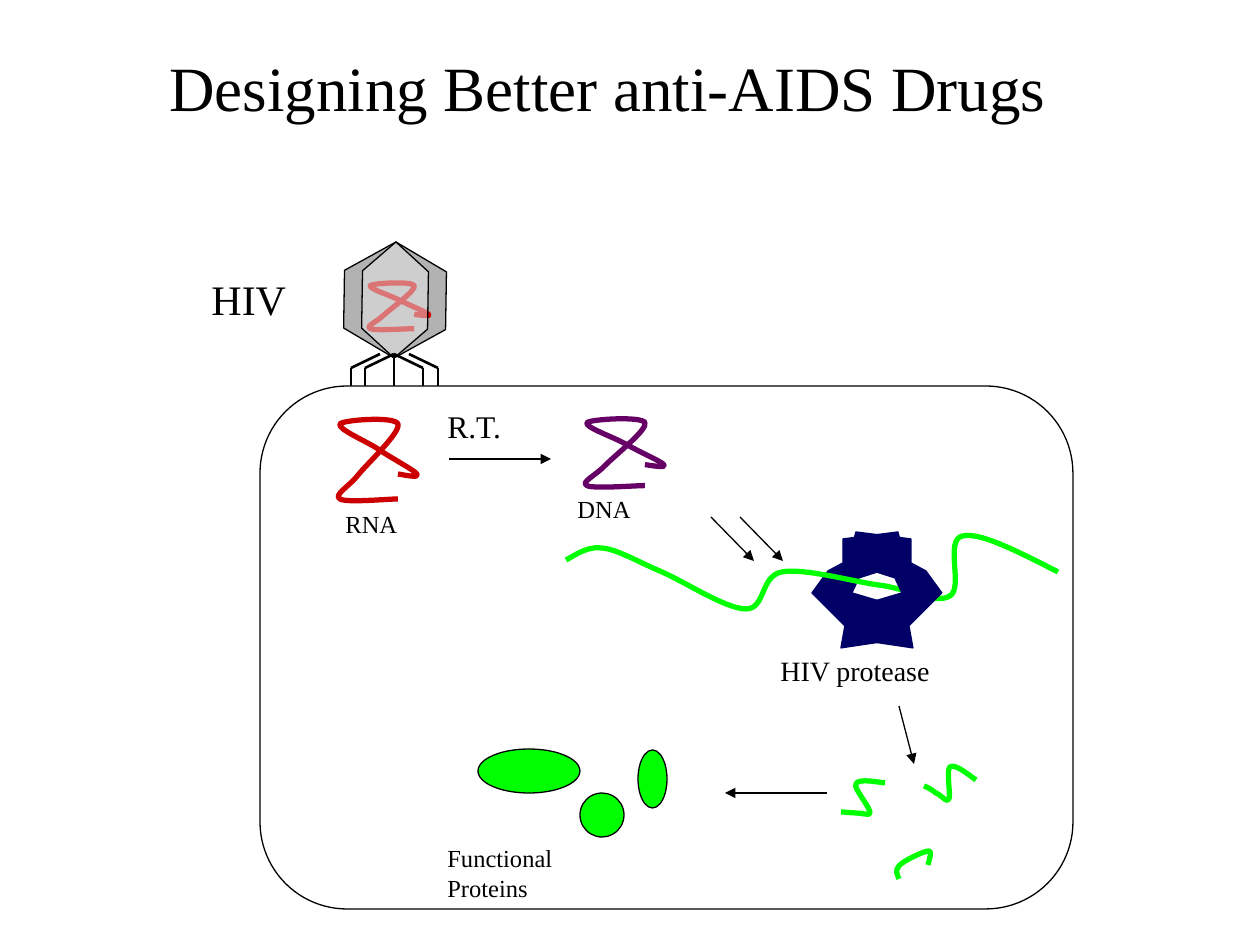
"""Build the slide on HIV replication and protease as a drug target."""
from lxml.etree import SubElement
from pptx import Presentation
from pptx.dml.color import RGBColor
from pptx.enum.shapes import MSO_CONNECTOR, MSO_SHAPE
from pptx.enum.text import MSO_ANCHOR
from pptx.oxml.ns import qn
from pptx.util import Pt

SCALE = 914400 / 126
FONT = "Times New Roman"
BLACK, WHITE, GREEN, NAVY = "000000", "FFFFFF", "00FF00", "000066"
RED, PURPLE = "CC0000", "660066"

LABELS = [
    ("HIV", 24, (199, 267, 106, 63)),
    ("R.T.", 18, (435, 401, 88, 50)),
    ("HIV protease", 16, (768, 647, 182, 47)),
    ("RNA", 14, (333, 503, 83, 42)),
    ("DNA", 14, (565, 488, 84, 42)),
    ("Functional Proteins", 14, (435, 837, 204, 42)),
    ("Designing Better anti-AIDS Drugs", 36, (157, 42, 920, 89)),
]

CELL = (260, 386, 813, 523)
CAPSID = (337, 249, 116, 102)
CORE = (337, 267, 116, 66)
PROTEINS = [(638, 750, 29, 58), (580, 793, 44, 44), (478, 749, 102, 44)]

LEG_TOP, LEG_KNEE, LEG_FOOT = 354, 368, 412
LEGS = [(394, 423), (409, 438), (394, 365), (380, 351)]
TAIL_X = 394

ARROWS = [
    ((449, 459), (551, 459)),
    ((711, 517), (754, 561)),
    ((740, 517), (783, 561)),
    ((899, 706), (914, 764)),
    ((827, 793), (725, 793)),
]

GENOME_SIZE = 87
GENOME = [
    (65, 58), (76, 60), (87, 62), (84, 58), (81, 54), (58, 42), (45, 33),
    (33, 25), (4, 13), (7, 8), (10, 4), (62, 0), (65, 8), (68, 16), (37, 45),
    (26, 58), (16, 71), (0, 79), (7, 83), (13, 87), (55, 83), (65, 83),
]
VIRUS_RNA = (365, 281, 66, 50)
CELL_RNA = (333, 416, 87, 87)
CELL_DNA = (580, 416, 87, 73)

POLYPROTEIN = [
    (1058, 572), (1019, 552), (980, 532), (963, 536), (944, 539), (964, 588),
    (950, 596), (936, 605), (906, 588), (878, 585), (850, 581), (804, 568),
    (782, 572), (760, 576), (766, 609), (746, 609), (726, 609), (685, 582),
    (662, 572), (638, 562), (617, 549), (601, 548), (586, 546), (571, 558),
    (566, 560),
]
FRAGMENTS = [
    [(885, 783), (871, 781), (858, 779), (856, 784), (853, 788), (871, 808),
     (870, 813), (871, 816), (861, 813), (856, 813), (851, 813), (845, 812),
     (841, 812)],
    [(976, 780), (965, 772), (955, 764), (950, 767), (946, 770), (951, 795),
     (949, 799), (948, 804), (941, 795), (936, 793), (932, 790), (929, 788),
     (924, 786)],
    [(899, 879), (897, 874), (895, 871), (899, 866), (903, 861), (924, 851),
     (929, 851), (932, 851), (930, 858), (928, 865)],
]

PROTEASE_MIRROR = 1754
PROTEASE_HALF = [
    (828, 571), (812, 593), (859, 640), (913, 648), (906, 609), (852, 593),
    (859, 578), (906, 563), (898, 532), (843, 539), (843, 563),
]


def emu(px):
    return round(px * SCALE)


def color(value):
    return RGBColor.from_string(value)


def style(shape, fill, line, width):
    shape.shadow.inherit = False
    if fill:
        shape.fill.solid()
        shape.fill.fore_color.rgb = color(fill)
    else:
        shape.fill.background()
    shape.line.color.rgb = color(line)
    shape.line.width = Pt(width)


def add_preset(page, kind, place, fill):
    shape = page.shapes.add_shape(kind, *map(emu, place))
    style(shape, fill, BLACK, 0.75)
    return shape


def add_hexagon(page, place, fill, slant):
    hexagon = add_preset(page, MSO_SHAPE.HEXAGON, place, fill)
    hexagon.adjustments[0] = slant
    hexagon.rotation = 90.9
    return hexagon


def add_line(page, start, end, width=0.75, arrow=False):
    line = page.shapes.add_connector(
        MSO_CONNECTOR.STRAIGHT, *map(emu, (*start, *end)))
    line.line.color.rgb = color(BLACK)
    line.line.width = Pt(width)
    if arrow:
        SubElement(line.line._get_or_add_ln(), qn("a:tailEnd"), type="triangle")
    SubElement(line._element.spPr, qn("a:effectLst"))


def add_outline(page, points, line, width, fill=None):
    spots = [(emu(x), emu(y)) for x, y in points]
    builder = page.shapes.build_freeform(*spots[0], scale=1.0)
    builder.add_line_segments(spots[1:], close=bool(fill))
    shape = builder.convert_to_shape()
    style(shape, fill, line, width)
    return shape


def add_curve(page, controls, line):
    shape = add_outline(page, controls, line, 3)
    track = next(shape._element.iter(qn("a:path")))
    steps = track.findall(qn("a:lnTo"))
    for first in range(0, len(steps), 3):
        bend = SubElement(track, qn("a:cubicBezTo"))
        for step in steps[first:first + 3]:
            bend.append(step[0])
            track.remove(step)


def add_genome(page, place, line):
    left, top, width, height = place
    add_curve(page, [(left + x * width / GENOME_SIZE, top + y * height / GENOME_SIZE)
                     for x, y in GENOME], line)


def add_label(page, words, size, place):
    frame = page.shapes.add_textbox(*map(emu, place)).text_frame
    frame.word_wrap = True
    frame.vertical_anchor = MSO_ANCHOR.TOP
    span = frame.paragraphs[0].add_run()
    span.text = words
    span.font.name = FONT
    span.font.size = Pt(size)
    span.font.color.rgb = color(BLACK)


def add_virus(page):
    add_hexagon(page, CAPSID, "B2B2B2", 0.286)
    add_genome(page, VIRUS_RNA, RED)
    core = add_hexagon(page, CORE, "EAEAEA", 0.444)
    tint = next(core._element.spPr.iter(qn("a:srgbClr")))
    SubElement(tint, qn("a:alpha"), val="50000")
    for hip, knee in LEGS:
        add_line(page, (hip, LEG_TOP), (knee, LEG_KNEE), 1.5)
        add_line(page, (knee, LEG_KNEE), (knee, LEG_FOOT), 1.5)
    add_line(page, (TAIL_X, LEG_TOP), (TAIL_X, LEG_FOOT), arrow=True)


def main():
    deck = Presentation()
    deck.slide_width, deck.slide_height = emu(1260), emu(945)
    page = deck.slides.add_slide(deck.slide_layouts[6])
    add_virus(page)
    add_preset(page, MSO_SHAPE.ROUNDED_RECTANGLE, CELL, WHITE)
    add_genome(page, CELL_RNA, RED)
    add_genome(page, CELL_DNA, PURPLE)
    add_outline(page, PROTEASE_HALF, NAVY, 0.75, NAVY)
    add_curve(page, POLYPROTEIN, GREEN)
    other_half = [(PROTEASE_MIRROR - x, y) for x, y in PROTEASE_HALF]
    add_outline(page, other_half, NAVY, 0.75, NAVY)
    for start, end in ARROWS:
        add_line(page, start, end, arrow=True)
    for fragment in FRAGMENTS:
        add_curve(page, fragment, GREEN)
    for place in PROTEINS:
        add_preset(page, MSO_SHAPE.OVAL, place, GREEN)
    for label in LABELS:
        add_label(page, *label)
    deck.save("out.pptx")


if __name__ == "__main__":
    main()
